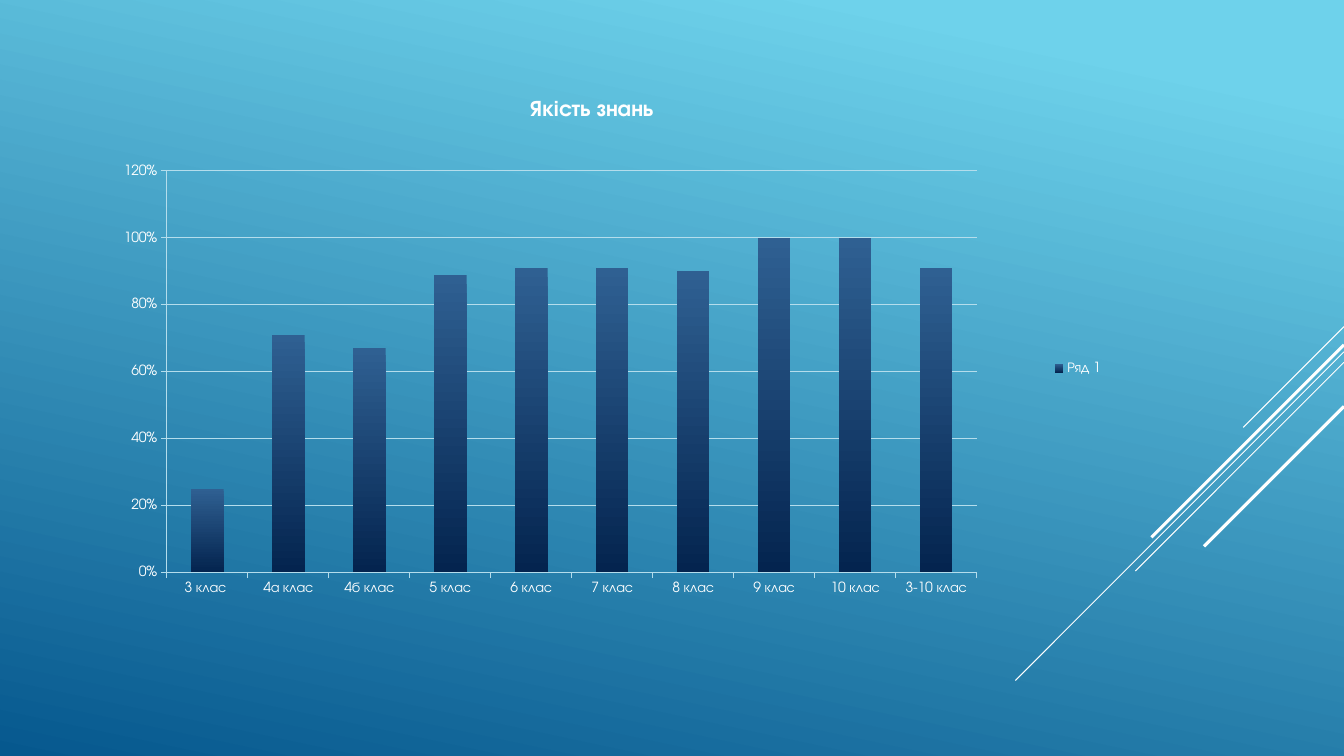
import pptx
import pptx.chart.data
import pptx.dml.color
import pptx.enum.chart
import pptx.oxml
import pptx.oxml.ns
import pptx.util
from lxml import etree

Pt = pptx.util.Pt
FONT = "TeX Gyre Adventor"
COLORS = {
    "sky": "6ED2EB",
    "sea": "06588E",
    "white": "FFFFFF",
    "grid": "B4DDEC",
    "bar_top": "2F6092",
    "bar_bottom": "04244F",
}
GRADES = {
    "3 клас ": 0.25, "4а клас": 0.71, "4б клас": 0.67, "5 клас": 0.89,
    "6 клас": 0.91, "7 клас": 0.91, "8 клас": 0.9, "9 клас": 1,
    "10 клас": 1, "3-10 клас": 0.91,
}
STRIPES = [
    (0, 72, 0.75),
    (18, 234.7, 0.75),
    (25.5, 149, 0.75),
    (13, 137.5, 2.25),
    (57, 100, 2.25),
]


def rgb(name):
    """Return the named colour."""
    return pptx.dml.color.RGBColor.from_string(COLORS[name])


def set_font(font, size=10, color="white", bold=False):
    """Format a font."""
    font.name, font.size, font.bold = FONT, Pt(size), bold
    font.color.rgb = rgb(color)


def put_text(tf, text, **fmt):
    """Write one formatted run into a text frame."""
    r = tf.paragraphs[0].add_run()
    r.text = text
    set_font(r.font, **fmt)


def set_line(line, color, width=0.75):
    """Give a line its colour and width."""
    line.color.rgb = rgb(color)
    line.width = Pt(width)


def set_gradient(fill, stops, clockwise):
    """Fill with a two-stop linear gradient."""
    fill.gradient()
    fill.gradient_angle = 360 - clockwise
    for stop, (position, color) in zip(fill.gradient_stops, stops):
        stop.position = position
        stop.color.rgb = rgb(color)


def add_stripes(s, x, y, w, h):
    """Draw the diagonal stripes from the right edge of the box."""
    right = x + w
    for drop, reach, width in STRIPES:
        top = y + drop
        line = s.shapes.add_connector(
            pptx.enum.shapes.MSO_CONNECTOR.STRAIGHT,
            Pt(right), Pt(top), Pt(right - reach), Pt(top + reach))
        set_line(line.line, "white", width)
        etree.SubElement(line._element.spPr, pptx.oxml.ns.qn("a:effectLst"))


def set_plot_area(chart, x, y, w, h):
    """Place the inner plot area by fractions of the chart."""
    area = chart._chartSpace.chart.plotArea
    for old in area.findall(pptx.oxml.ns.qn("c:layout")):
        area.remove(old)
    settings = [("layoutTarget", "inner"), ("xMode", "edge"), ("yMode", "edge"),
                ("x", x), ("y", y), ("w", w), ("h", h)]
    layout = etree.Element(pptx.oxml.ns.qn("c:layout"))
    manual = etree.SubElement(layout, pptx.oxml.ns.qn("c:manualLayout"))
    for tag, value in settings:
        etree.SubElement(manual, pptx.oxml.ns.qn("c:" + tag), val=str(value))
    area.insert(0, layout)


def add_quality_chart(s, x, y, w, h):
    """Draw the column chart of results by class in the box."""
    data = pptx.chart.data.CategoryChartData(number_format="0%")
    data.categories = list(GRADES)
    data.add_series("Ряд 1", list(GRADES.values()))
    chart = s.shapes.add_chart(
        pptx.enum.chart.XL_CHART_TYPE.COLUMN_CLUSTERED,
        Pt(x), Pt(y), Pt(w), Pt(h), data).chart
    set_font(chart.font)
    chart.has_title = True
    put_text(chart.chart_title.text_frame, "Якість знань ", size=16, bold=True)
    chart.chart_title.include_in_layout = False
    chart.has_legend = True
    chart.legend.position = pptx.enum.chart.XL_LEGEND_POSITION.RIGHT
    chart.legend.include_in_layout = False
    set_plot_area(chart, 0.088, 0.163, 0.78, 0.685)

    plot = chart.plots[0]
    plot.gap_width = 150
    plot.vary_by_categories = False
    set_gradient(plot.series[0].format.fill,
                 [(0, "bar_top"), (1, "bar_bottom")], 90)
    for axis in (chart.category_axis, chart.value_axis):
        axis.major_tick_mark = pptx.enum.chart.XL_TICK_MARK.OUTSIDE
        set_line(axis.format.line, "grid")
    axis = chart.value_axis
    axis.minimum_scale, axis.maximum_scale, axis.major_unit = 0, 1.2, 0.2
    axis.has_major_gridlines = True
    set_line(axis.major_gridlines.format.line, "grid")
    axis.tick_labels.number_format = "0%"
    axis.tick_labels.number_format_is_linked = False


def main():
    """Build and save the slide."""
    prs = pptx.Presentation()
    prs.slide_width, prs.slide_height = Pt(960), Pt(540)
    s = prs.slides.add_slide(prs.slide_layouts[6])
    set_gradient(s.background.fill, [(0.1, "sky"), (1, "sea")], 102)
    add_stripes(s, 725, 233.3, 235, 253)
    add_quality_chart(s, 54, 54, 741.6, 418.3)
    prs.save("out.pptx")


if __name__ == "__main__":
    main()
